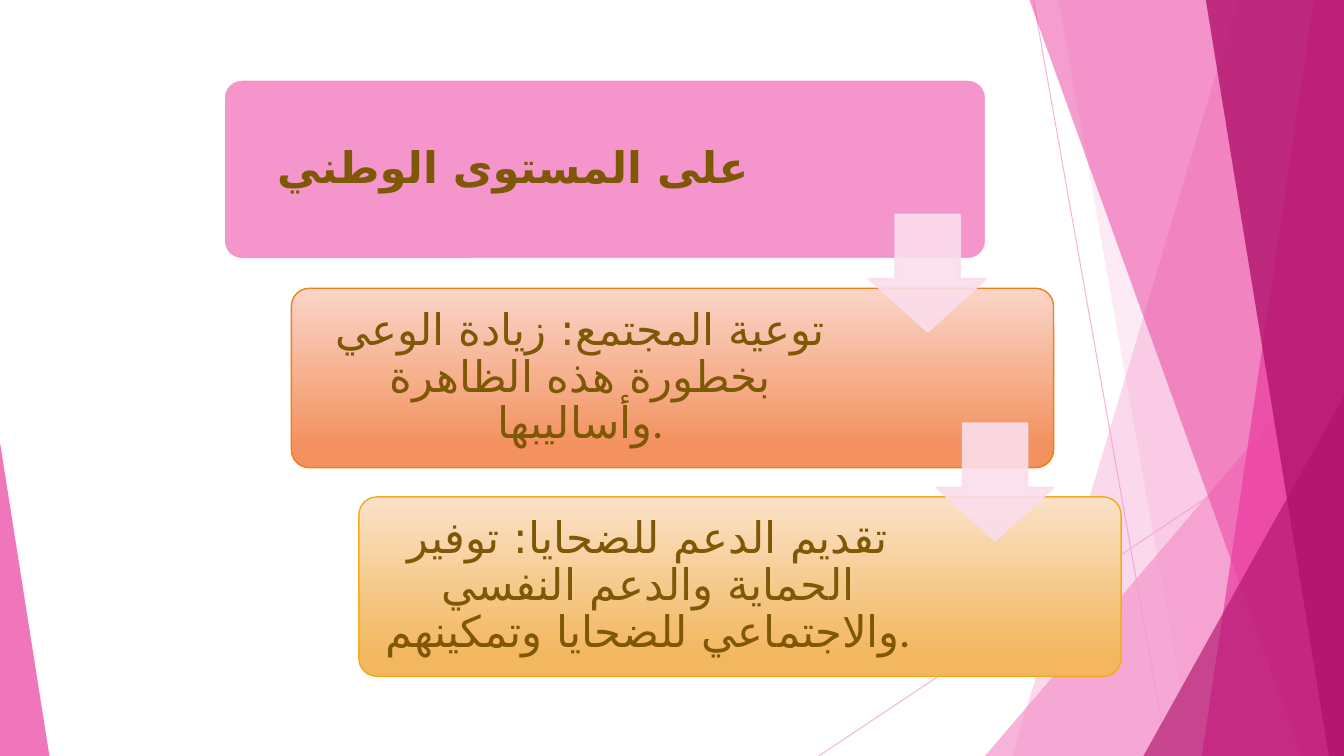
import pptx
import pptx.util
import pptx.dml.color
import pptx.enum.shapes
import pptx.enum.text
import pptx.oxml.ns
import lxml.etree

Inches, Pt = pptx.util.Inches, pptx.util.Pt
RGB = pptx.dml.color.RGBColor
SHAPE = pptx.enum.shapes.MSO_SHAPE
qn = pptx.oxml.ns.qn

PINK = RGB(0xF4, 0x96, 0xCB)
MAGENTA = RGB(0xEB, 0x3D, 0x9F)
PLUM = RGB(0xB2, 0x13, 0x6D)
BLUSH = RGB(0xFB, 0xDD, 0xEC)
BROWN = RGB(0x7E, 0x58, 0x07)
WHITE = RGB(0xFF, 0xFF, 0xFF)
ORANGE = RGB(0xF2, 0x7E, 0x19)
AMBER = RGB(0xF2, 0xAC, 0x19)
PEACH = (RGB(0xFA, 0xD5, 0xC8), RGB(0xF3, 0x92, 0x5F))
HONEY = (RGB(0xFA, 0xE2, 0xC8), RGB(0xF3, 0xB7, 0x5F))

WIDTH, HEIGHT = 13.33, 7.5
FONT, ARABIC_FONT = "Lato", "DejaVu Sans"

CARDS = [
    ("على المستوى الوطني", (PINK,), WHITE, 1.5),
    ("توعية المجتمع: زيادة الوعي بخطورة هذه الظاهرة وأساليبها.", PEACH, ORANGE, 1),
    ("تقديم الدعم للضحايا: توفير الحماية والدعم النفسي والاجتماعي للضحايا وتمكينهم.",
     HONEY, AMBER, 1),
]
CARD_X, CARD_Y, CARD_W, CARD_H = 2.22, 0.79, 7.56, 1.78
STEP_X, STEP_Y = 0.67, 2.07
TEXT_W, INSET = 5.63, 0.05
ARROW_DX, ARROW_DY, ARROW_SIZE = 6.4, 1.34, 1.16

RAYS = [((10.25, 0), (11.58, HEIGHT)), ((WIDTH, 4.03), (8.12, HEIGHT))]
FACETS = [
    ("wedge", (12.28, 10.04), PINK, 36),
    ("wedge", (10.5, 11.83), PINK, 20),
    ("triangle", (9.77, 3.33, 3.56, 1), PINK, 72),
    ("wedge", (10.21, 12.91), MAGENTA, 50),
    ("wedge", (13.03, 11.92), MAGENTA, 70),
    ("wedge", (11.96, 13.18), PLUM, 80),
    ("triangle", (11.34, 3.93, 1.99, 1), PLUM, 66),
    ("triangle", (0, 4.39, 0.49, 0), MAGENTA, 70),
]


def set_opacity(fill_parent, percent):
    """Make the solid colour under an element partly transparent."""
    color = next(fill_parent.iter(qn("a:srgbClr")))
    lxml.etree.SubElement(color, qn("a:alpha")).set("val", str(percent * 1000))


def add_ray(s, start, end):
    """Draw one thin background line."""
    line = s.shapes.add_connector(pptx.enum.shapes.MSO_CONNECTOR.STRAIGHT,
                                  *map(Inches, start + end))
    line.line.color.rgb = PINK
    line.line.width = Pt(0.75)
    set_opacity(line.line._get_or_add_ln(), 70)
    lxml.etree.SubElement(line._element.spPr, qn("a:effectLst"))


def add_facet(s, kind, measures, color, opacity):
    """Draw one translucent background facet."""
    if kind == "wedge":
        top, bottom = measures
        builder = s.shapes.build_freeform(Inches(top), 0)
        corners = [(WIDTH, 0), (WIDTH, HEIGHT), (bottom, HEIGHT)]
        builder.add_line_segments([(Inches(x), Inches(y)) for x, y in corners])
        facet = builder.convert_to_shape()
    else:
        x, y, w, apex = measures
        facet = s.shapes.add_shape(SHAPE.ISOSCELES_TRIANGLE, Inches(x), Inches(y),
                                   Inches(w), Inches(HEIGHT - y))
        facet.adjustments[0] = apex
    facet.shadow.inherit = False
    facet.fill.solid()
    facet.fill.fore_color.rgb = color
    set_opacity(facet._element.spPr, opacity)
    facet.line.fill.background()


def add_card(s, x, y, colors, line_color, line_width):
    """Draw one rounded card with a plain or gradient fill."""
    card = s.shapes.add_shape(SHAPE.ROUNDED_RECTANGLE, Inches(x), Inches(y),
                              Inches(CARD_W), Inches(CARD_H))
    card.adjustments[0] = 0.1
    card.shadow.inherit = False
    if len(colors) == 1:
        card.fill.solid()
        card.fill.fore_color.rgb = colors[0]
    else:
        card.fill.gradient()
        card.fill.gradient_angle = 270
        for stop, color, position in zip(card.fill.gradient_stops, colors, (0, 0.88)):
            stop.color.rgb = color
            stop.position = position
    card.line.color.rgb = line_color
    card.line.width = Pt(line_width)


def write_label(box, x, y, text, bold):
    """Place and format the text of a card."""
    box.left, box.top = Inches(x + INSET), Inches(y + INSET)
    box.width, box.height = Inches(TEXT_W), Inches(CARD_H - 2 * INSET)
    tf = box.text_frame
    tf.text = text
    tf.word_wrap = True
    tf.auto_size = pptx.enum.text.MSO_AUTO_SIZE.NONE
    tf.vertical_anchor = pptx.enum.text.MSO_ANCHOR.MIDDLE
    tf.margin_left = tf.margin_right = tf.margin_top = tf.margin_bottom = Inches(0.13)
    p = tf.paragraphs[0]
    p.alignment = pptx.enum.text.PP_ALIGN.CENTER
    p.line_spacing = 0.9
    p.space_before = Pt(0)
    r = p.runs[0]
    r.font.size = Pt(31)
    r.font.bold = bold
    r.font.name = FONT
    r.font.color.rgb = BROWN
    lxml.etree.SubElement(r.font._element, qn("a:cs")).set("typeface", ARABIC_FONT)


def add_arrow(s, x, y):
    """Draw one translucent arrow leading to the next card."""
    arrow = s.shapes.add_shape(SHAPE.DOWN_ARROW, Inches(x), Inches(y),
                               Inches(ARROW_SIZE), Inches(ARROW_SIZE))
    arrow.adjustments[0], arrow.adjustments[1] = 0.55, 0.45
    arrow.shadow.inherit = False
    arrow.fill.solid()
    arrow.fill.fore_color.rgb = BLUSH
    set_opacity(arrow._element.spPr, 90)
    arrow.line.color.rgb = BLUSH
    arrow.line.width = Pt(1.5)
    set_opacity(arrow.line._get_or_add_ln(), 90)


def main():
    """Build the slide and save it."""
    prs = pptx.Presentation()
    prs.slide_width, prs.slide_height = Inches(WIDTH), Inches(HEIGHT)
    s = prs.slides.add_slide(prs.slide_layouts[5])
    title = s.shapes.title

    for start, end in RAYS:
        add_ray(s, start, end)
    for facet in FACETS:
        add_facet(s, *facet)

    corners = [(CARD_X + i * STEP_X, CARD_Y + i * STEP_Y) for i in range(len(CARDS))]
    for i, ((x, y), (text, colors, line_color, line_width)) in enumerate(zip(corners, CARDS)):
        add_card(s, x, y, colors, line_color, line_width)
        if i == 0:
            box = title
            s.shapes._spTree.append(title._element)
        else:
            box = s.shapes.add_textbox(0, 0, 0, 0)
        write_label(box, x, y, text, bold=i == 0)
    for x, y in corners[:-1]:
        add_arrow(s, x + ARROW_DX, y + ARROW_DY)

    prs.save("out.pptx")


if __name__ == "__main__":
    main()
